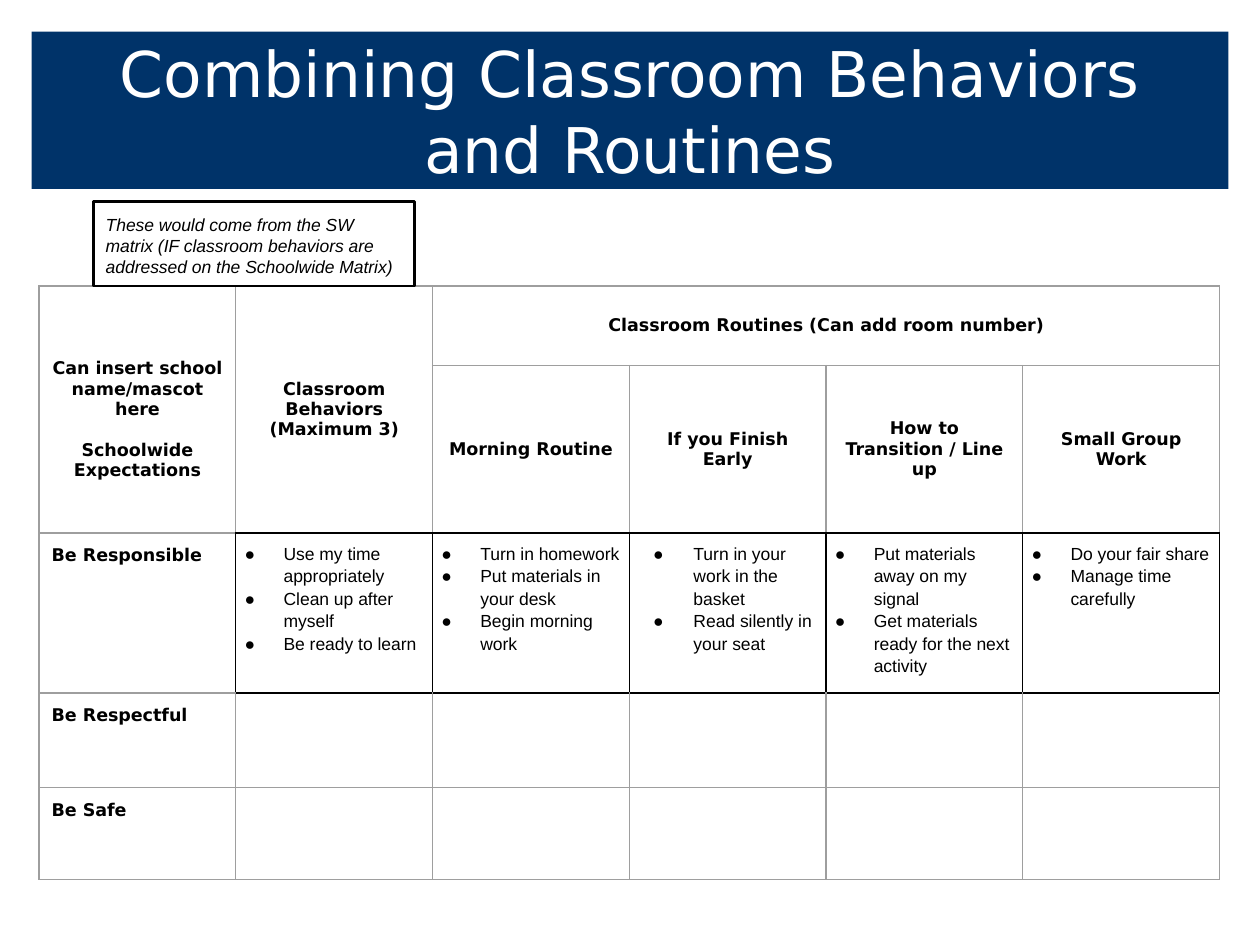
from dataclasses import dataclass

from lxml import etree
from pptx import Presentation
from pptx.dml.color import RGBColor
from pptx.enum.shapes import MSO_SHAPE
from pptx.enum.text import MSO_ANCHOR, MSO_AUTO_SIZE, PP_ALIGN
from pptx.oxml.ns import qn
from pptx.util import Inches, Pt

RECTANGLE = MSO_SHAPE.RECTANGLE
TOP, MIDDLE = MSO_ANCHOR.TOP, MSO_ANCHOR.MIDDLE
LEFT, CENTER = PP_ALIGN.LEFT, PP_ALIGN.CENTER
NO_AUTOFIT = MSO_AUTO_SIZE.NONE
TITLE_ONLY = 5


@dataclass(frozen=True)
class Theme:
    navy: str = "003369"
    white: str = "FFFFFF"
    black: str = "000000"
    grid: str = "9E9E9E"
    heading_font: str = "DejaVu Sans"
    body_font: str = "Arial"
    title_size: float = 36
    text_size: float = 10
    grid_width: float = 0.75
    note_width: float = 1.5


THEME = Theme()

# Table geometry and content
COLUMN_COUNT = 6
COLUMN_WIDTH = 9.37 / COLUMN_COUNT
ROW_HEIGHTS = [0.63, 0.77, 1.27, 0.75, 0.73]
EXAMPLE_ROW = 2
ROUTINES = ["Morning Routine", "If you Finish Early",
            "How to Transition / Line up", "Small Group Work"]
EXPECTATIONS = ["Be Responsible", "Be Respectful", "Be Safe"]
EXAMPLES = [
    ["Use my time appropriately", "Clean up after myself", "Be ready to learn"],
    ["Turn in homework", "Put materials in your desk", "Begin morning work"],
    ["Turn in your work in the basket", "Read silently in your seat"],
    ["Put materials away on my signal",
     "Get materials ready for the next activity"],
    ["Do your fair share", "Manage time carefully"],
]
BULLET_INDENT = (0.31, 0.31)
WIDE_INDENTS = {3: (0.44, 0.32)}  # column: left margin, hanging indent


def color(value):
    return RGBColor.from_string(value)


def write(frame, lines, font=THEME.heading_font, size=THEME.text_size,
          fill=THEME.black, bold=False, italic=False, align=LEFT,
          line_spacing=None):
    """Write one paragraph per line, all in the same format."""
    for index, line in enumerate(lines):
        para = frame.paragraphs[0] if index == 0 else frame.add_paragraph()
        para.alignment = align
        if line_spacing:
            para.line_spacing = line_spacing
        span = para.add_run()
        span.text = line
        span.font.name = font
        span.font.size = Pt(size)
        span.font.bold = bold
        span.font.italic = italic
        span.font.color.rgb = color(fill)
    return frame.paragraphs


def set_margins(box, margin):
    box.margin_left = box.margin_right = Inches(margin)
    box.margin_top = box.margin_bottom = Inches(margin)


def add_bullet(para, left, hanging):
    properties = para._p.get_or_add_pPr()
    properties.set("marL", str(Inches(left)))
    properties.set("indent", str(-Inches(hanging)))
    bullet_color = etree.SubElement(properties, qn("a:buClr"))
    etree.SubElement(bullet_color, qn("a:srgbClr"), val=THEME.black)
    etree.SubElement(properties, qn("a:buFont"), typeface=THEME.body_font)
    etree.SubElement(properties, qn("a:buChar"), char="●")


def set_borders(cell, edges):
    """Draw the cell's edges; edges maps side letters to colours."""
    properties = cell._tc.get_or_add_tcPr()
    for index, (side, value) in enumerate(edges.items()):
        line = etree.Element(qn(f"a:ln{side}"), w=str(Pt(THEME.grid_width)))
        fill = etree.SubElement(line, qn("a:solidFill"))
        etree.SubElement(fill, qn("a:srgbClr"), val=value)
        properties.insert(index, line)


def edge_colors(row, column, height):
    """Edges that touch an example cell are black, the others grey."""
    def pick(*places):
        touches = any(r == EXAMPLE_ROW and 1 <= c < COLUMN_COUNT
                      for r, c in places)
        return THEME.black if touches else THEME.grid

    here = (row, column)
    return {"L": pick(here, (row, column - 1)),
            "R": pick(here, (row, column + 1)),
            "T": pick(here, (row - 1, column)),
            "B": pick(here, (row + height, column))}


def fill_heading(cell, lines, align=CENTER, anchor=MIDDLE):
    cell.vertical_anchor = anchor
    return write(cell.text_frame, lines, bold=True, align=align)


def add_title(page):
    title = page.shapes.title
    title.left, title.top = Inches(0.25), Inches(0.25)
    title.width, title.height = Inches(9.5), Inches(1.25)
    title.fill.solid()
    title.fill.fore_color.rgb = color(THEME.navy)
    frame = title.text_frame
    frame.auto_size = NO_AUTOFIT
    frame.vertical_anchor = MIDDLE
    write(frame, ["Combining Classroom Behaviors", "and Routines"],
          size=THEME.title_size, fill=THEME.white, align=CENTER)


def add_matrix(page):
    table = page.shapes.add_table(
        len(ROW_HEIGHTS), COLUMN_COUNT, Inches(0.31), Inches(2.27),
        Inches(9.37), Inches(sum(ROW_HEIGHTS))).table
    table.first_row = table.horz_banding = False
    for column in table.columns:
        column.width = Inches(COLUMN_WIDTH)
    for row, height in zip(table.rows, ROW_HEIGHTS):
        row.height = Inches(height)

    # Merged headings
    for first, last in [((0, 0), (1, 0)), ((0, 1), (1, 1)), ((0, 2), (0, 5))]:
        table.cell(*first).merge(table.cell(*last))

    # Cell grid
    for row in range(len(ROW_HEIGHTS)):
        for column in range(COLUMN_COUNT):
            cell = table.cell(row, column)
            height = cell.span_height if cell.is_merge_origin else 1
            set_borders(cell, edge_colors(row, column, height))
            cell.fill.background()
            set_margins(cell, 0.1)

    # Column headings
    school = table.cell(0, 0)
    paras = fill_heading(school, ["Can insert school name/mascot here",
                                  "Schoolwide", "Expectations"])
    school.margin_top = Inches(0.26)
    paras[1].space_before = Pt(11.6)
    fill_heading(table.cell(0, 1), ["Classroom Behaviors", "(Maximum 3)"])
    fill_heading(table.cell(0, 2), ["Classroom Routines (Can add room number)"])
    for column, routine in enumerate(ROUTINES, start=2):
        fill_heading(table.cell(1, column), [routine])

    # Row headings
    for row, expectation in enumerate(EXPECTATIONS, start=EXAMPLE_ROW):
        fill_heading(table.cell(row, 0), [expectation], LEFT, TOP)

    # Example behaviors
    for column, examples in enumerate(EXAMPLES, start=1):
        cell = table.cell(EXAMPLE_ROW, column)
        set_margins(cell, 0.07)
        for para in write(cell.text_frame, examples, font=THEME.body_font,
                          line_spacing=1.15):
            add_bullet(para, *WIDE_INDENTS.get(column, BULLET_INDENT))


def add_note(page):
    note = page.shapes.add_shape(RECTANGLE, Inches(0.74), Inches(1.6),
                                 Inches(2.55), Inches(0.67))
    note.shadow.inherit = False
    note.fill.solid()
    note.fill.fore_color.rgb = color(THEME.white)
    note.line.color.rgb = color(THEME.black)
    note.line.width = Pt(THEME.note_width)
    frame = note.text_frame
    frame.word_wrap = True
    frame.vertical_anchor = TOP
    set_margins(frame, 0.1)
    write(frame, ["These would come from the SW matrix (IF classroom behaviors "
                  "are addressed on the Schoolwide Matrix)"],
          font=THEME.body_font, italic=True)


def main():
    deck = Presentation()
    deck.slide_width, deck.slide_height = Inches(10), Inches(7.5)
    page = deck.slides.add_slide(deck.slide_layouts[TITLE_ONLY])
    add_title(page)
    add_matrix(page)
    add_note(page)
    deck.save("out.pptx")


if __name__ == "__main__":
    main()
